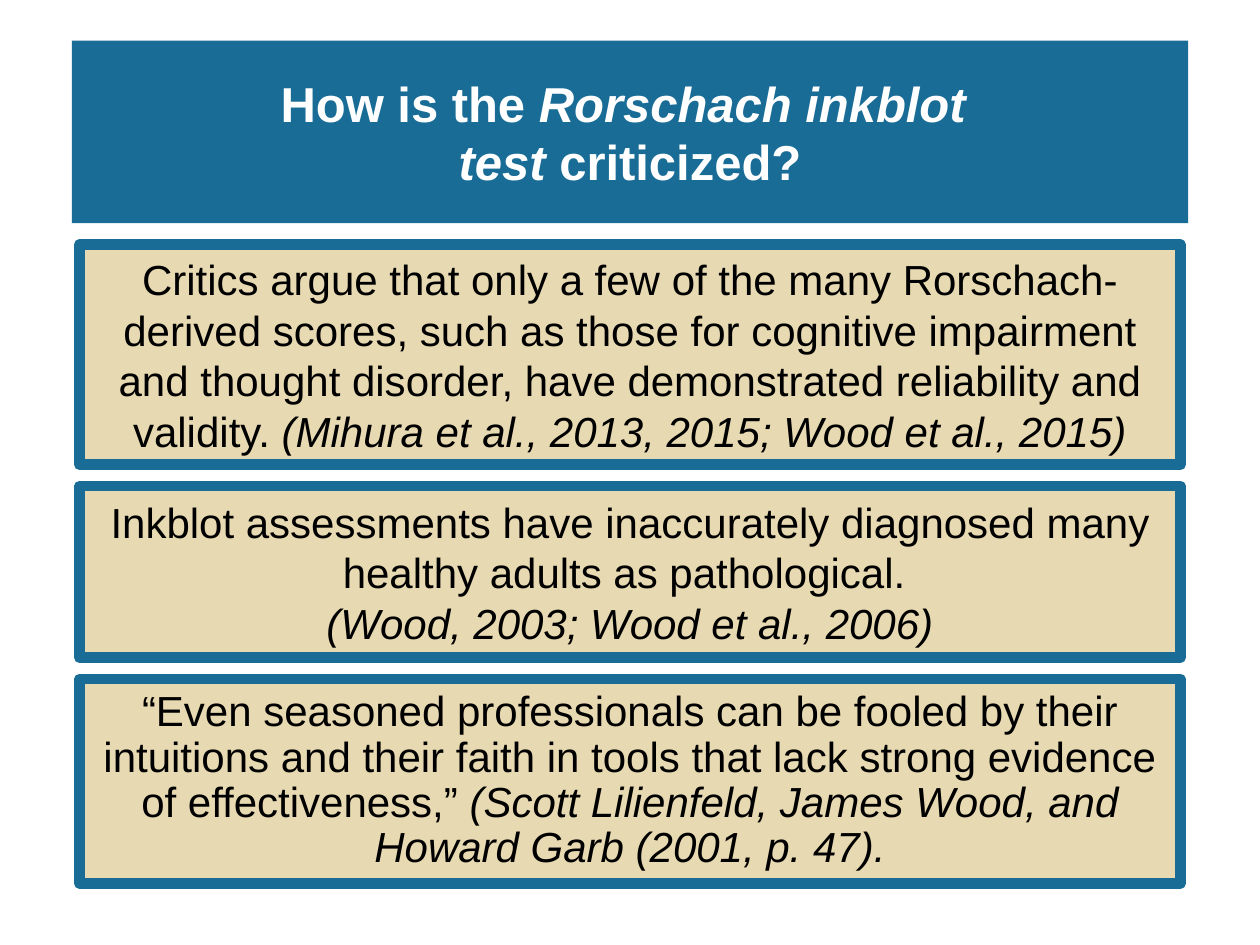
from dataclasses import dataclass

from pptx import Presentation
from pptx import util as u
from pptx.dml.color import RGBColor
from pptx.enum import shapes, text


@dataclass(frozen=True)
class Theme:
    blue: RGBColor = RGBColor(0x18, 0x6C, 0x96)
    sand: RGBColor = RGBColor(0xE7, 0xD9, 0xB1)
    white: RGBColor = RGBColor(0xFF, 0xFF, 0xFF)
    black: RGBColor = RGBColor(0, 0, 0)
    font: str = "Arial"
    title_size: u.Pt = u.Pt(28)
    body_size: u.Pt = u.Pt(24)
    border: u.Pt = u.Pt(6)


THEME = Theme()

TITLE = [("How is the ", False), ("Rorschach inkblot \vtest ", True), ("criticized?", False)]

CRITICISMS = [
    (4.44, 1.0, [[
        ("Critics argue that only a few of the many Rorschach-derived scores, such as "
         "those for cognitive impairment and thought disorder, have demonstrated "
         "reliability and validity. ", False),
        ("(Mihura et al., 2013, 2015; Wood et al., 2015)", True),
    ]]),
    (3.46, 1.0, [
        [("Inkblot assessments have inaccurately diagnosed many", False)],
        [("healthy adults as pathological. ", False)],
        [("(Wood, 2003; Wood et al., 2006)", True)],
    ]),
    (4.12, 0.9, [[
        ("“Even seasoned professionals can be fooled by their intuitions and their faith "
         "in tools that lack strong evidence of effectiveness,” ", False),
        ("(Scott Lilienfeld, James Wood, and Howard Garb (2001, p. 47).", True),
    ]]),
]


def place(shape, left, top, width, height):
    shape.left, shape.top = u.Cm(left), u.Cm(top)
    shape.width, shape.height = u.Cm(width), u.Cm(height)


def fill_solid(shape, color):
    shape.fill.solid()
    shape.fill.fore_color.rgb = color


def write_paragraphs(shape, paragraphs, size, color, bold=False, spacing=1.0):
    frame = shape.text_frame
    frame.word_wrap = True
    frame.auto_size = text.MSO_AUTO_SIZE.NONE
    frame.vertical_anchor = text.MSO_ANCHOR.MIDDLE
    for index, runs in enumerate(paragraphs):
        paragraph = frame.add_paragraph() if index else frame.paragraphs[0]
        paragraph.alignment = text.PP_ALIGN.CENTER
        paragraph.line_spacing = spacing
        paragraph.font.name = THEME.font
        paragraph.font.size = size
        paragraph.font.bold = bold
        paragraph.font.color.rgb = color
        for words, italic in runs:
            for part, line in enumerate(words.split("\v")):
                if part:
                    paragraph.add_line_break()
                run = paragraph.add_run()
                run.text = line
                run.font.italic = italic


def add_title(slide, left, top, width, height):
    title = slide.shapes.title
    place(title, left, top, width, height)
    fill_solid(title, THEME.blue)
    write_paragraphs(title, [TITLE], THEME.title_size, THEME.white, bold=True)


def add_criticisms(slide, left, top, width, gap):
    for height, spacing, paragraphs in CRITICISMS:
        panel = slide.shapes.add_shape(shapes.MSO_SHAPE.RECTANGLE, 0, 0, 0, 0)
        place(panel, left, top, width, height)
        panel.shadow.inherit = False
        fill_solid(panel, THEME.sand)
        panel.line.color.rgb = THEME.blue
        panel.line.width = THEME.border
        write_paragraphs(panel, paragraphs, THEME.body_size, THEME.black, spacing=spacing)
        top += height + gap


def main():
    presentation = Presentation()
    presentation.slide_width, presentation.slide_height = u.Cm(25.4), u.Cm(19.05)
    slide = presentation.slides.add_slide(presentation.slide_layouts[5])
    add_title(slide, left=1.45, top=0.82, width=22.5, height=3.68)
    add_criticisms(slide, left=1.6, top=4.93, width=22.2, gap=0.43)
    presentation.save("out.pptx")


if __name__ == "__main__":
    main()
